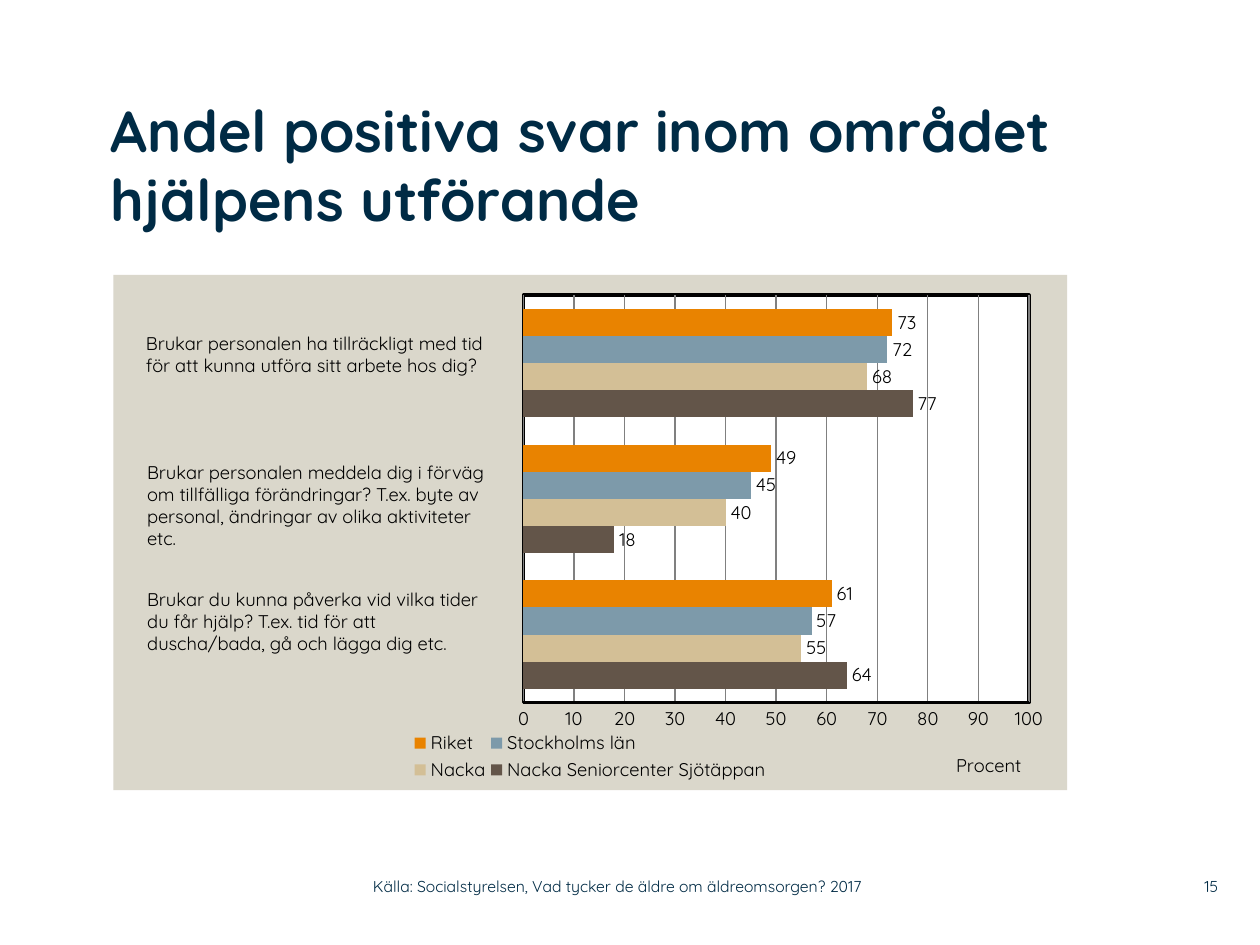
from pptx import Presentation
from pptx.chart.data import CategoryChartData
from pptx.dml.color import RGBColor
from pptx.enum.chart import XL_CHART_TYPE as ChartType
from pptx.enum.chart import XL_LABEL_POSITION as LabelPosition
from pptx.enum.chart import XL_LEGEND_POSITION as LegendPosition
from pptx.enum.chart import XL_TICK_MARK as TickMark
from pptx.enum.text import MSO_ANCHOR as Anchor
from pptx.enum.text import MSO_AUTO_SIZE as AutoSize
from pptx.enum.text import PP_ALIGN as Align
from pptx.oxml import parse_xml
from pptx.oxml.ns import nsdecls, qn
from pptx.util import Pt

NAVY = RGBColor(0x00, 0x2B, 0x45)
BLACK = RGBColor(0x00, 0x00, 0x00)
WHITE = RGBColor(0xFF, 0xFF, 0xFF)
GRAY = RGBColor(0x80, 0x80, 0x80)
SAND = RGBColor(0xDA, 0xD7, 0xCB)
BROWN = RGBColor(0x63, 0x55, 0x49)
BEIGE = RGBColor(0xD3, 0xBF, 0x96)
BLUE = RGBColor(0x7D, 0x9A, 0xAA)
ORANGE = RGBColor(0xE9, 0x83, 0x00)

SERIES = [
    ("Nacka Seniorcenter Sjötäppan", (64, 18, 77), BROWN),
    ("Nacka", (55, 40, 68), BEIGE),
    ("Stockholms län", (57, 45, 72), BLUE),
    ("Riket", (61, 49, 73), ORANGE),
]
QUESTIONS = [
    ((76.3, 186.5, 215.3, 32.4), [
        "Brukar personalen ha tillräckligt med tid",
        "för att kunna utföra sitt arbete hos dig?",
    ]),
    ((77, 260, 213.8, 58.3), [
        "Brukar personalen meddela dig i förväg om tillfälliga förändringar? "
        "T.ex. byte av personal, ändringar av olika aktiviteter etc.",
    ]),
    ((77, 332.6, 213.8, 45.4), [
        "Brukar du kunna påverka vid vilka tider",
        "du får hjälp? T.ex. tid för att",
        "duscha/bada, gå och lägga dig etc.",
    ]),
]


def apply(target, values):
    for name, value in values.items():
        setattr(target, name, value)


def fill_xml(color, line_color=None, line_width=0):
    def solid(value):
        return f'<a:solidFill><a:srgbClr val="{value}"/></a:solidFill>'

    outline = solid(line_color) if line_color is not None else "<a:noFill/>"
    return parse_xml(
        f'<c:spPr {nsdecls("c", "a")}>{solid(color)}'
        f'<a:ln w="{Pt(line_width)}">{outline}</a:ln></c:spPr>'
    )


def set_layout(element, after=None, inner=False, **frame):
    for old in element.findall(qn("c:layout")):
        element.remove(old)
    target = '<c:layoutTarget val="inner"/>' if inner else ""
    modes = "".join(f'<c:{key}Mode val="edge"/>' for key in frame if key in "xy")
    values = "".join(f'<c:{key} val="{value}"/>' for key, value in frame.items())
    layout = parse_xml(
        f'<c:layout {nsdecls("c")}><c:manualLayout>{target}{modes}{values}'
        "</c:manualLayout></c:layout>"
    )
    if after:
        element.find(qn(after)).addnext(layout)
    else:
        element.insert(0, layout)


class SlideBuilder:
    font_name = "Quicksand"

    def __init__(self, slide):
        self.slide = slide

    def style_font(self, font, size, color, bold=False):
        apply(font, {"name": self.font_name, "size": Pt(size), "bold": bold})
        font.color.rgb = color

    def fill_frame(self, frame, lines, size, color, align=Align.LEFT, bold=False):
        frame.text = "\n".join(lines)
        for paragraph in frame.paragraphs:
            paragraph.alignment = align
            for run in paragraph.runs:
                self.style_font(run.font, size, color, bold)

    def format_frame(self, frame, anchor, inset):
        apply(frame, {"word_wrap": True, "auto_size": AutoSize.NONE,
                      "vertical_anchor": anchor})
        if not inset:
            apply(frame, {f"margin_{side}": 0
                          for side in ("left", "top", "right", "bottom")})

    def title(self, box, text):
        shape = self.slide.shapes.title
        apply(shape, dict(zip(("left", "top", "width", "height"), map(Pt, box))))
        self.format_frame(shape.text_frame, Anchor.TOP, False)
        self.fill_frame(shape.text_frame, [text], 33, NAVY, bold=True)

    def text(self, box, lines, size, color, anchor=Anchor.TOP, align=Align.LEFT,
             inset=True):
        frame = self.slide.shapes.add_textbox(*map(Pt, box)).text_frame
        self.format_frame(frame, anchor, inset)
        self.fill_frame(frame, lines, size, color, align)

    def bar_chart(self, box, categories, series, axis_title):
        data = CategoryChartData()
        data.categories = categories
        for name, values, _ in series:
            data.add_series(name, values)
        chart = self.slide.shapes.add_chart(
            ChartType.BAR_CLUSTERED, *map(Pt, box), data
        ).chart
        apply(chart, {"has_title": False, "has_legend": True})
        self.style_font(chart.font, 10.5, BLACK)

        plot = chart.plots[0]
        apply(plot, {"gap_width": 100, "overlap": 0, "vary_by_categories": False,
                     "has_data_labels": True})
        apply(plot.data_labels, {"show_value": True,
                                 "position": LabelPosition.OUTSIDE_END})
        self.style_font(plot.data_labels.font, 10.5, BLACK)
        for bars, (_, _, color) in zip(plot.series, series):
            bars.format.fill.solid()
            bars.format.fill.fore_color.rgb = color

        chart.category_axis.visible = False
        axis = chart.value_axis
        apply(axis, {"minimum_scale": 0, "maximum_scale": 100, "major_unit": 10,
                     "major_tick_mark": TickMark.NONE,
                     "minor_tick_mark": TickMark.NONE,
                     "has_major_gridlines": True, "has_title": True})
        for line, color, width in ((axis.format.line, BLACK, 2),
                                   (axis.major_gridlines.format.line, GRAY, 0.75)):
            line.color.rgb = color
            line.width = Pt(width)
        self.fill_frame(axis.axis_title.text_frame, [axis_title], 10.5, BLACK,
                        Align.CENTER)
        set_layout(axis.axis_title._element, "c:tx", x=0.88, y=0.92)

        apply(chart.legend, {"position": LegendPosition.BOTTOM,
                             "include_in_layout": False})
        self.style_font(chart.legend.font, 10.5, BLACK)
        set_layout(chart.legend._element, "c:legendPos", x=0.31, y=0.88, w=0.38, h=0.11)

        chart_element = chart._chartSpace.chart
        chart_element.addnext(fill_xml(SAND))
        plot_area = chart_element.plotArea
        plot_area.append(fill_xml(WHITE, BLACK, 2.25))
        set_layout(plot_area, inner=True, x=0.43, y=0.04, w=0.53, h=0.79)


def main():
    presentation = Presentation()
    apply(presentation, {"slide_width": Pt(720), "slide_height": Pt(540)})
    builder = SlideBuilder(presentation.slides.add_slide(presentation.slide_layouts[5]))
    builder.bar_chart((64.8, 157, 545, 294.5), ("1", "2", "3"), SERIES, "Procent")
    builder.title((63.4, 54, 547.2, 102.2),
                  "Andel positiva svar inom området hjälpens utförande")
    for box, lines in QUESTIONS:
        builder.text(box, lines, 10.5, BLACK)
    builder.text((662.4, 496, 33.8, 20.9), ["15"], 9, NAVY,
                 Anchor.MIDDLE, Align.RIGHT, inset=False)
    builder.text((213.1, 496, 319, 20.9),
                 ["Källa: Socialstyrelsen, Vad tycker de äldre om äldreomsorgen? 2017"],
                 9, NAVY, Anchor.MIDDLE, inset=False)
    presentation.save("out.pptx")


if __name__ == "__main__":
    main()
